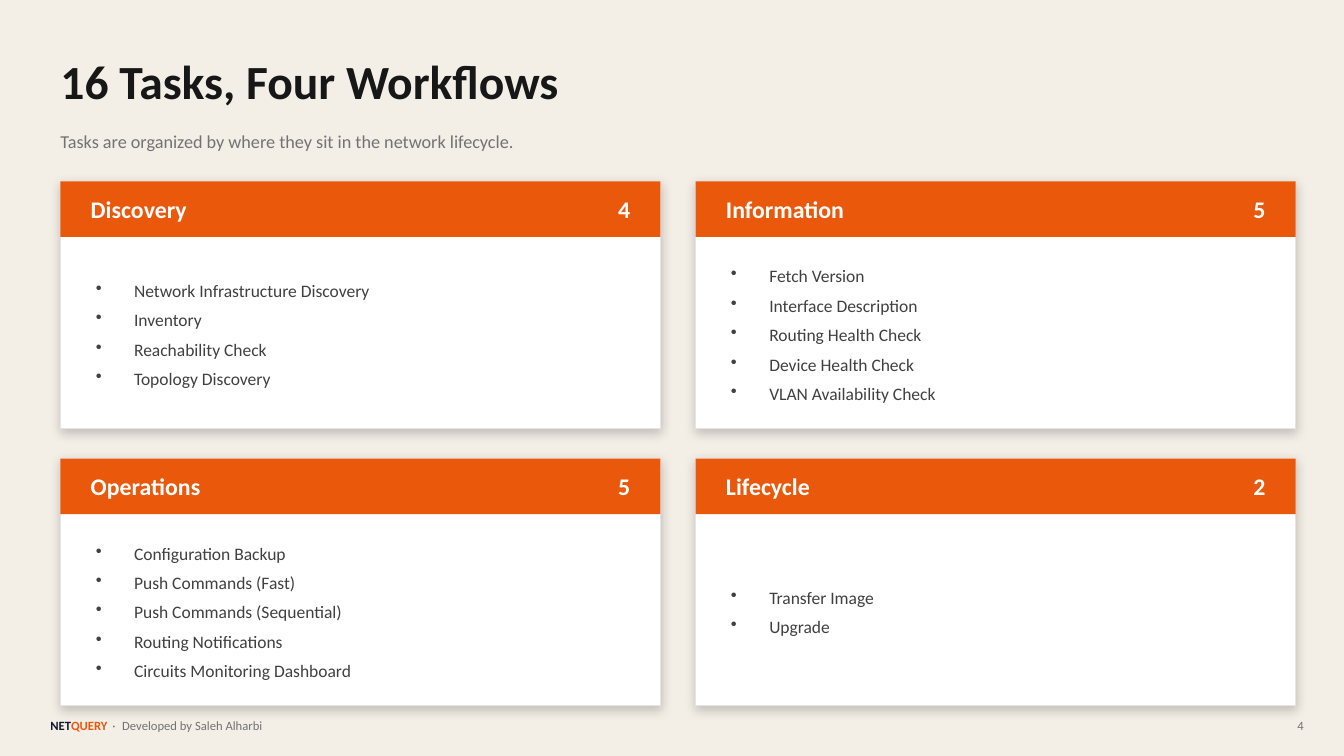
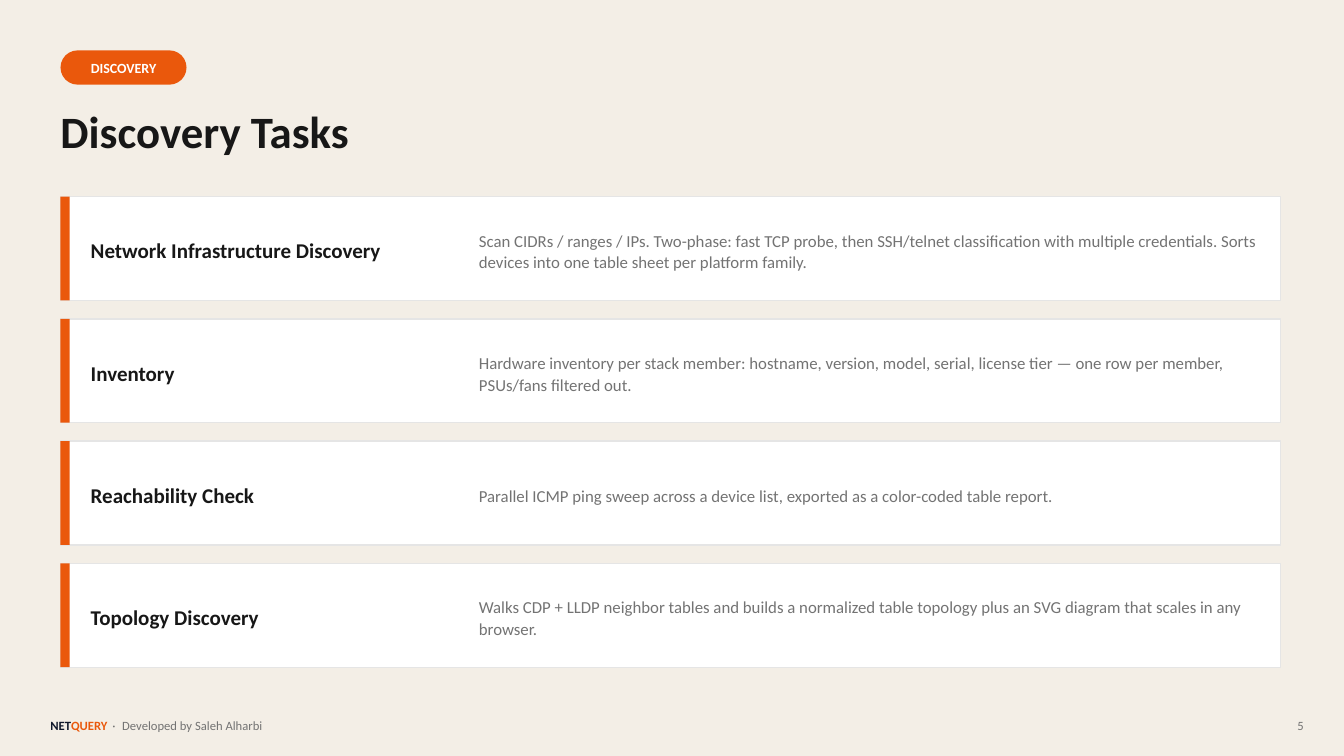
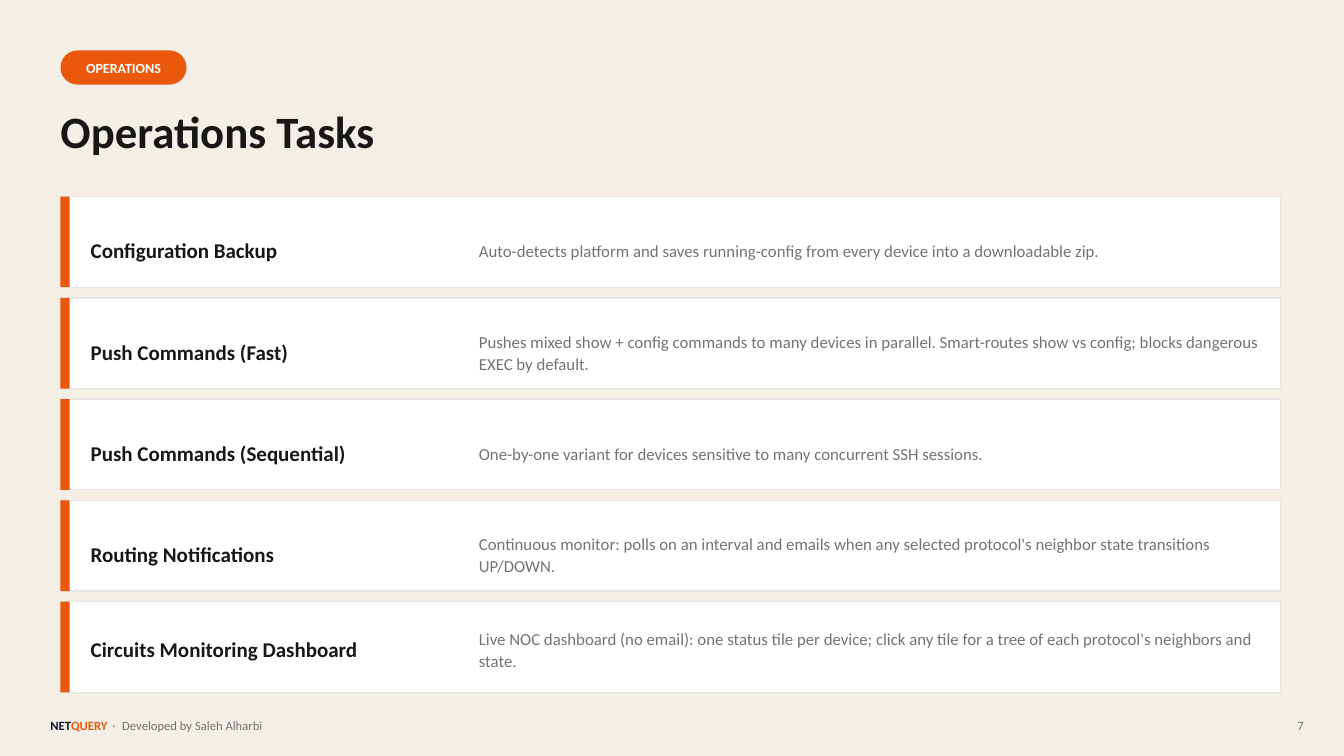
from dataclasses import dataclass

from lxml import etree
from pptx import Presentation
from pptx import util as u
from pptx.dml.color import RGBColor
from pptx.enum import shapes, text
from pptx.oxml import ns


@dataclass(frozen=True)
class Theme:
    font: str = "Calibri"
    paper: str = "F3EEE6"
    white: str = "FFFFFF"
    accent: str = "EA580C"
    edge: str = "E5E5E5"
    ink: str = "171717"
    navy: str = "0F172A"
    body: str = "404040"
    muted: str = "737373"
    overview_title: float = 34
    title: float = 32
    card_title: float = 17
    row_title: float = 15
    subtitle: float = 13
    bullet: float = 12.5
    detail: float = 12
    pill: float = 10
    footer: float = 9


THEME = Theme()
LEFT = 0.6
ALIGN = text.PP_ALIGN


def add_xml(parent, tag, **attributes):
    return etree.SubElement(parent, ns.qn(tag), attributes)


class SlideBuilder:
    def __init__(self, deck):
        self.deck = deck
        self.slide = None

    def start(self, number):
        """Add a slide with the shared background and footer."""
        self.slide = self.deck.slides.add_slide(self.deck.slide_layouts[6])
        fill = self.slide.background.fill
        fill.solid()
        fill.fore_color.rgb = RGBColor.from_string(THEME.paper)
        self.footer(number)

    def style(self, span, size, color, bold=False):
        font = span.font
        font.name, font.size, font.bold = THEME.font, u.Pt(size), bold
        font.color.rgb = RGBColor.from_string(color)

    def fill_text(self, shape, lines, size, color, bold=False, align=ALIGN.LEFT):
        """Write one paragraph per line, without insets, centred vertically."""
        frame = shape.text_frame
        frame.word_wrap = True
        frame.vertical_anchor = text.MSO_ANCHOR.MIDDLE
        frame.margin_left = frame.margin_right = 0
        frame.margin_top = frame.margin_bottom = 0
        frame.text = "\n".join(lines)
        for para in frame.paragraphs:
            para.alignment = align
            for span in para.runs:
                self.style(span, size, color, bold)
        return frame

    def label(self, at, lines, size, color, bold=False, align=ALIGN.LEFT):
        box = self.slide.shapes.add_textbox(*map(u.Inches, at))
        return self.fill_text(box, lines, size, color, bold, align)

    def panel(self, at, color, edge=None, kind=shapes.MSO_SHAPE.RECTANGLE):
        box = self.slide.shapes.add_shape(kind, *map(u.Inches, at))
        box.shadow.inherit = False
        box.fill.solid()
        box.fill.fore_color.rgb = RGBColor.from_string(color)
        if edge:
            box.line.color.rgb = RGBColor.from_string(edge)
            box.line.width = u.Pt(1)
        else:
            box.line.fill.background()
        return box

    def soft_shadow(self, box):
        effects = box._element.spPr.find(ns.qn("a:effectLst"))
        shadow = add_xml(effects, "a:outerShdw", blurRad=str(u.Pt(8)), dist=str(u.Pt(2)),
                         dir="5400000", algn="bl", rotWithShape="0")
        color = add_xml(shadow, "a:srgbClr", val="000000")
        add_xml(color, "a:alpha", val="20000")

    def title(self, words, top, size):
        self.label((LEFT, top, 11, 0.7), [words], size, THEME.ink, True)

    def pill(self, words):
        box = self.panel((LEFT, 0.5, 1.25, 0.34), THEME.accent,
                         kind=shapes.MSO_SHAPE.ROUNDED_RECTANGLE)
        box.adjustments[0] = 0.5
        self.fill_text(box, [words], THEME.pill, THEME.white, True, ALIGN.CENTER)

    def bullets(self, at, lines):
        frame = self.label(at, lines, THEME.bullet, THEME.body)
        for para in frame.paragraphs:
            para.space_after = u.Pt(6)
            props = para._p.get_or_add_pPr()
            props.set("marL", str(u.Inches(0.38)))
            props.set("indent", str(u.Inches(-0.38)))
            add_xml(props, "a:buChar", char="•")

    def card(self, left, top, width, height, heading, tasks):
        """Draw a task list under a coloured band with its task count."""
        band, pad, count_width = 0.55, 0.3, 0.7
        self.soft_shadow(self.panel((left, top, width, height), THEME.white, THEME.edge))
        self.panel((left, top, width, band), THEME.accent)
        inner = width - 2 * pad
        self.label((left + pad, top, inner, band), [heading],
                   THEME.card_title, THEME.white, True)
        self.label((left + width - pad - count_width, top, count_width, band),
                   [str(len(tasks))], THEME.card_title, THEME.white, True, ALIGN.RIGHT)
        self.bullets((left + 0.35, top + 0.72, inner, 1.6), tasks)

    def task_row(self, top, height, name, detail):
        self.panel((LEFT, top, 12.1, height), THEME.white, THEME.edge)
        self.panel((LEFT, top, 0.09, height), THEME.accent)
        text_top = top + 0.12
        text_height = min(0.83, 6.78 - text_top)
        self.label((0.9, text_top, 3.7, text_height), [name],
                   THEME.row_title, THEME.ink, True)
        frame = self.label((4.75, text_top, 7.8, text_height), [detail],
                           THEME.detail, THEME.muted)
        frame.paragraphs[0].line_spacing = 1.08

    def footer(self, number):
        frame = self.label((0.5, 7.05, 10, 0.3), ["NET"], THEME.footer, THEME.navy, True)
        para = frame.paragraphs[0]
        for words, color, bold, tracking in (
            ("QUERY", THEME.accent, True, 0),
            (" · ", THEME.muted, False, 140),
            ("Developed by Saleh Alharbi", THEME.muted, False, 0),
        ):
            span = para.add_run()
            span.text = words
            self.style(span, THEME.footer, color, bold)
            if tracking:
                span._r.get_or_add_rPr().set("spc", str(tracking))
        self.label((12.43, 7.05, 0.5, 0.3), [str(number)],
                   THEME.footer, THEME.muted, align=ALIGN.RIGHT)

    def overview(self, number, title, subtitle, workflows):
        self.start(number)
        self.title(title, 0.45, THEME.overview_title)
        self.label((LEFT, 1.2, 11, 0.4), [subtitle], THEME.subtitle, THEME.muted)
        width, height, column_gap, row_gap = 5.95, 2.45, 0.35, 0.3
        for index, (heading, tasks) in enumerate(workflows):
            row, column = divmod(index, 2)
            self.card(LEFT + column * (width + column_gap),
                      1.8 + row * (height + row_gap), width, height, heading, tasks)

    def task_list(self, number, workflow, bottom, height, tasks):
        """Spread equal task rows evenly down to the given bottom."""
        self.start(number)
        self.pill(workflow.upper())
        self.title(f"{workflow} Tasks", 0.95, THEME.title)
        top = 1.95
        pitch = (bottom - top - height) / (len(tasks) - 1)
        for index, (name, detail) in enumerate(tasks):
            self.task_row(top + index * pitch, height, name, detail)


DISCOVERY = [
    ("Network Infrastructure Discovery",
     "Scan CIDRs / ranges / IPs. Two-phase: fast TCP probe, then SSH/telnet classification "
     "with multiple credentials. Sorts devices into one table sheet per platform family."),
    ("Inventory",
     "Hardware inventory per stack member: hostname, version, model, serial, license tier "
     "— one row per member, PSUs/fans filtered out."),
    ("Reachability Check",
     "Parallel ICMP ping sweep across a device list, exported as a color-coded table report."),
    ("Topology Discovery",
     "Walks CDP + LLDP neighbor tables and builds a normalized table topology plus an SVG "
     "diagram that scales in any browser."),
]
OPERATIONS = [
    ("Configuration Backup",
     "Auto-detects platform and saves running-config from every device into a "
     "downloadable zip."),
    ("Push Commands (Fast)",
     "Pushes mixed show + config commands to many devices in parallel. Smart-routes show vs "
     "config; blocks dangerous EXEC by default."),
    ("Push Commands (Sequential)",
     "One-by-one variant for devices sensitive to many concurrent SSH sessions."),
    ("Routing Notifications",
     "Continuous monitor: polls on an interval and emails when any selected protocol's "
     "neighbor state transitions UP/DOWN."),
    ("Circuits Monitoring Dashboard",
     "Live NOC dashboard (no email): one status tile per device; click any tile for a tree "
     "of each protocol's neighbors and state."),
]
WORKFLOWS = [
    ("Discovery", [name for name, _ in DISCOVERY]),
    ("Information", ["Fetch Version", "Interface Description", "Routing Health Check",
                     "Device Health Check", "VLAN Availability Check"]),
    ("Operations", [name for name, _ in OPERATIONS]),
    ("Lifecycle", ["Transfer Image", "Upgrade"]),
]


def main():
    deck = Presentation()
    deck.slide_width, deck.slide_height = u.Inches(13.33), u.Inches(7.5)
    builder = SlideBuilder(deck)
    builder.overview(4, "16 Tasks, Four Workflows",
                     "Tasks are organized by where they sit in the network lifecycle.",
                     WORKFLOWS)
    builder.task_list(5, "Discovery", 6.62, 1.03, DISCOVERY)
    builder.task_list(7, "Operations", 6.87, 0.9, OPERATIONS)
    deck.save("out.pptx")


if __name__ == "__main__":
    main()
